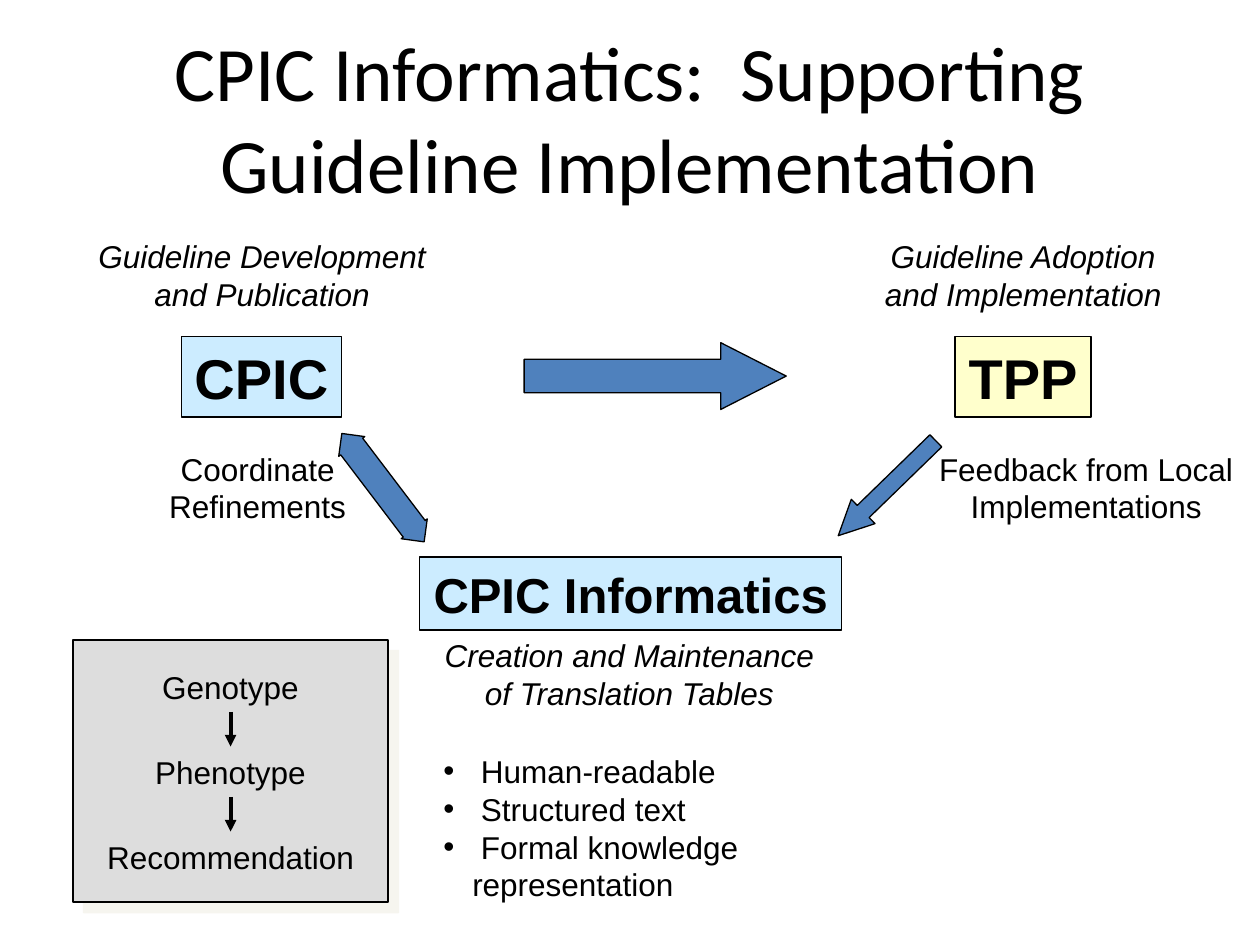
from lxml import etree
from pptx import Presentation
from pptx import util as u
from pptx.dml.color import RGBColor
from pptx.enum import shapes, text
from pptx.oxml import parse_xml
from pptx.oxml.ns import nsdecls, qn

COLORS = {"ink": "000000", "cpic": "CCECFF", "tpp": "FFFFCC",
          "arrow": "4F81BD", "panel": "DDDDDD", "shade": "EEECE1"}
COLUMNS, ROWS = 100, 75
KINDS = shapes.MSO_SHAPE


class Board:
    """Style and current slide; positions are (column, row, columns, rows)."""

    font = "Arial"
    body_size = 18
    outline = 0.75

    def __init__(self, deck):
        self.slide = deck.slides.add_slide(deck.slide_layouts[5])
        self.cell_w = deck.slide_width / COLUMNS
        self.cell_h = deck.slide_height / ROWS

    def place(self, col, row, cols, rows):
        return [int(col * self.cell_w), int(row * self.cell_h),
                int(cols * self.cell_w), int(rows * self.cell_h)]

    def color(self, name):
        return RGBColor.from_string(COLORS[name])

    def set_lines(self, frame, lines, wrap=False, align=text.PP_ALIGN.CENTER, **formats):
        frame.word_wrap = wrap
        formats = {"name": self.font, "size": self.body_size, **formats}
        formats["size"] = u.Pt(formats["size"])
        for index, line in enumerate(lines):
            paragraph = frame.add_paragraph() if index else frame.paragraphs[0]
            paragraph.alignment = align
            run = paragraph.add_run()
            run.text = line
            for key, value in formats.items():
                setattr(run.font, key, value)
            run.font.color.rgb = self.color("ink")

    def title(self, words, at):
        holder = self.slide.shapes.title
        holder.left, holder.top, holder.width, holder.height = self.place(*at)
        holder.text_frame.vertical_anchor = text.MSO_ANCHOR.MIDDLE
        self.set_lines(holder.text_frame, [words], wrap=True, name="Calibri", size=44)

    def label(self, lines, at, **formats):
        box = self.slide.shapes.add_textbox(*self.place(*at))
        self.set_lines(box.text_frame, lines, **formats)
        return box

    def bullets(self, lines, at, indent):
        box = self.label(lines, at, wrap=True, align=text.PP_ALIGN.LEFT)
        hang = int(indent * self.cell_w)
        for paragraph in box.text_frame.paragraphs:
            props = paragraph._p.get_or_add_pPr()
            props.set("marL", str(hang))
            props.set("indent", str(-hang))
            etree.SubElement(props, qn("a:buFont"), typeface="Arial")
            etree.SubElement(props, qn("a:buChar"), char="•")

    def shape(self, kind, at, fill, rotation=0, adjust=()):
        item = self.slide.shapes.add_shape(kind, *self.place(*at))
        item.shadow.inherit = False
        item.fill.solid()
        item.fill.fore_color.rgb = self.color(fill)
        item.line.color.rgb = self.color("ink")
        item.line.width = u.Pt(self.outline)
        item.rotation = rotation
        for index, value in enumerate(adjust):
            item.adjustments[index] = value
        return item

    def named_box(self, name, at, fill, size):
        box = self.shape(KINDS.RECTANGLE, at, fill)
        self.set_lines(box.text_frame, [name], size=size, bold=True)

    def panel(self, at, fill):
        box = self.shape(KINDS.RECTANGLE, at, fill)
        effects = box._element.spPr.find(qn("a:effectLst"))
        effects.append(parse_xml(
            f'<a:outerShdw {nsdecls("a")} dist="{u.Pt(8.5)}" dir="2700000" '
            f'algn="ctr" rotWithShape="0"><a:srgbClr val="{COLORS["shade"]}">'
            '<a:alpha val="50000"/></a:srgbClr></a:outerShdw>'))

    def step_arrow(self, upper, lower):
        arrow = self.slide.shapes.add_connector(
            shapes.MSO_CONNECTOR.STRAIGHT, 0, 0, 0, 0)
        arrow.begin_connect(upper, 2)
        arrow.end_connect(lower, 0)
        arrow.line.color.rgb = self.color("ink")
        arrow.line.width = u.Pt(2.25)
        etree.SubElement(arrow.line._get_or_add_ln(), qn("a:tailEnd"), type="triangle")
        etree.SubElement(arrow._element.spPr, qn("a:effectLst"))


def main():
    deck = Presentation()
    deck.slide_width, deck.slide_height = u.Inches(10), u.Inches(7.5)
    board = Board(deck)
    board.title("CPIC Informatics:  Supporting Guideline Implementation", (5, 3, 90, 12.5))

    # The three parties
    board.named_box("CPIC", (14.4, 26.7, 12.7, 6.4), "cpic", 32)
    board.named_box("TPP", (75.8, 26.7, 10.8, 6.4), "tpp", 32)
    board.named_box("CPIC Informatics", (33.3, 44.2, 33.5, 5.8), "cpic", 28)

    # Role of each party
    for role, at in (
        (["Guideline Development", "and Publication"], (6.8, 18.3, 28, 7)),
        (["Guideline Adoption", "and Implementation"], (69.2, 18.3, 24, 7)),
        (["Creation and Maintenance", "of Translation Tables"], (34.3, 50, 31.3, 7)),
    ):
        board.label(role, at, italic=True)

    # Flows between the parties
    board.shape(KINDS.RIGHT_ARROW, (41.6, 27.2, 20.8, 5.3), "arrow", adjust=(0.5, 0.98))
    board.shape(KINDS.RIGHT_ARROW, (65, 37.4, 10.8, 2.7), "arrow", 135.8, (0.5, 1.02))
    board.shape(KINDS.UP_DOWN_ARROW, (29.1, 33.3, 2.6, 10.8), "arrow", 322.8, (0.5, 0.84))
    board.label(["Coordinate Refinements"], (11.6, 35.2, 17.7, 7), wrap=True)
    board.label(["Feedback from Local Implementations"], (73.3, 35.2, 25.8, 7), wrap=True)

    # Forms of the translation tables
    board.bullets([" Human-readable", " Structured text", " Formal knowledge representation"],
                  (34.2, 59.2, 40.7, 10), indent=2.3)

    # Steps from genotype to recommendation
    board.panel((5.8, 50.8, 25, 20.8), "panel")
    steps = [board.label([step], (7.5, 52.5 + 6.75 * index, 21.6, 4))
             for index, step in enumerate(("Genotype", "Phenotype", "Recommendation"))]
    for upper, lower in zip(steps, steps[1:]):
        board.step_arrow(upper, lower)

    deck.save("out.pptx")


if __name__ == "__main__":
    main()
